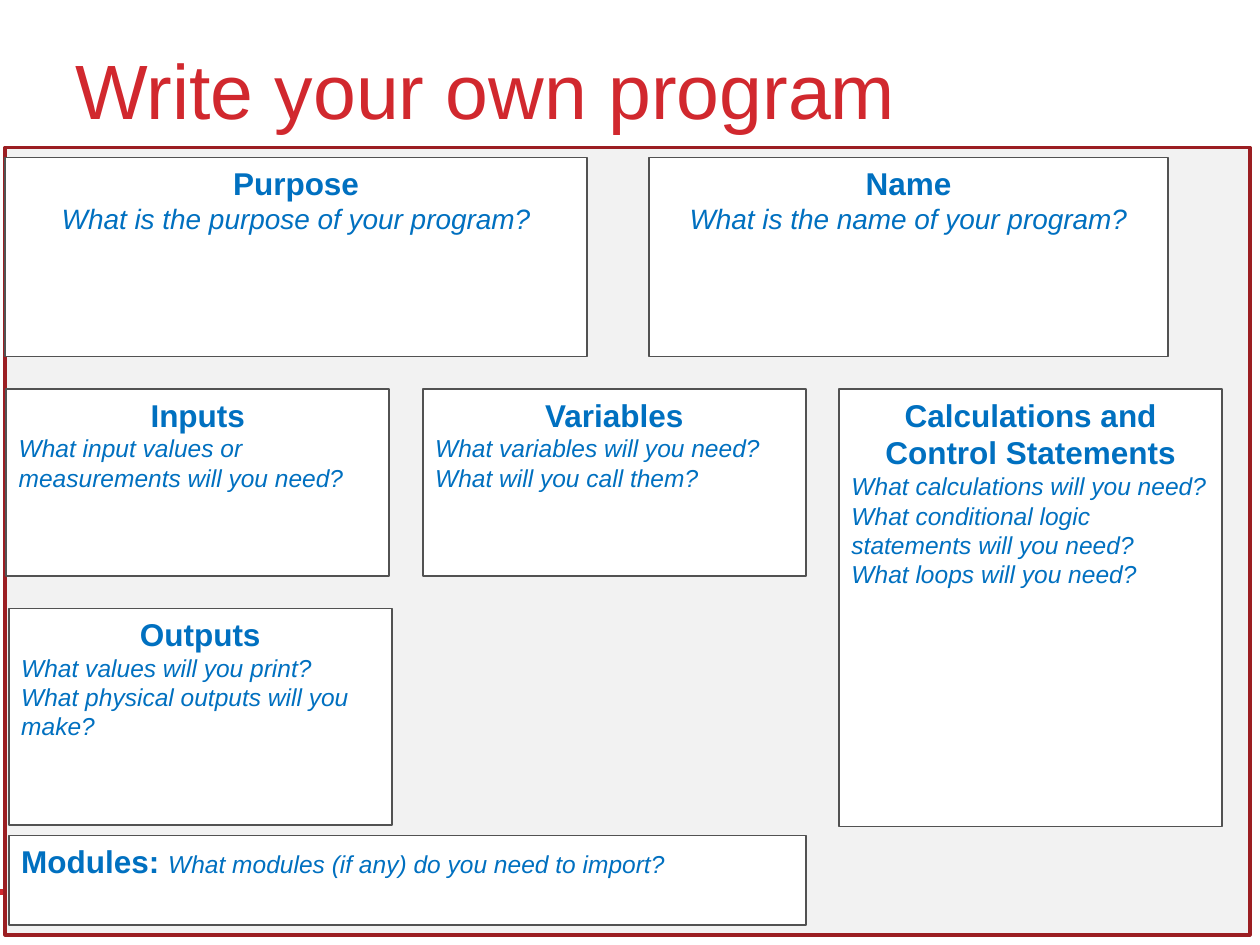
from lxml import etree
from pptx import Presentation
from pptx.dml.color import RGBColor
from pptx.enum import shapes, text
from pptx.oxml.ns import qn
from pptx.util import Inches, Pt

RED, DARK, BLUE = "D1282E", "9B1E22", "0070C0"
GREY, PALE, WHITE = "525252", "F2F2F2", "FFFFFF"
LEFT, MID = text.PP_ALIGN.LEFT, text.PP_ALIGN.CENTER


def color(code):
    return RGBColor.from_string(code)


def write(para, words, size=14, fill=BLUE, bold=False, italic=False, align=LEFT):
    para.alignment = align
    run = para.add_run()
    run.text = words
    font = run.font
    font.name, font.size = "Arial", Pt(size)
    font.bold, font.italic = bold, italic
    font.color.rgb = color(fill)


def panel(slide, box, fill=WHITE, line=GREY, width=1):
    shape = slide.shapes.add_shape(
        shapes.MSO_SHAPE.RECTANGLE, *map(Inches, box))
    shape.shadow.inherit = False
    shape.fill.solid()
    shape.fill.fore_color.rgb = color(fill)
    shape.line.color.rgb = color(line)
    shape.line.width = Pt(width)
    frame = shape.text_frame
    frame.word_wrap = True
    frame.vertical_anchor = text.MSO_ANCHOR.TOP
    return frame


def card(slide, box, head, hints, size=14, align=LEFT):
    frame = panel(slide, box)
    write(frame.paragraphs[0], head, size=18, bold=True, align=MID)
    for hint in hints:
        write(frame.add_paragraph(), hint, size=size, italic=True, align=align)


def strip(slide, box, head, hint):
    para = panel(slide, box).paragraphs[0]
    write(para, head, size=18, bold=True)
    write(para, hint, italic=True)


def rule(slide, x1, x2, y):
    line = slide.shapes.add_connector(
        shapes.MSO_CONNECTOR.STRAIGHT, *map(Inches, (x1, y, x2, y)))
    line.line.color.rgb = color(RED)
    line.line.width = Pt(3)
    etree.SubElement(line._element.spPr, qn("a:effectLst"))


def title(slide, box, words):
    frame = slide.shapes.add_textbox(*map(Inches, box)).text_frame
    frame.word_wrap = True
    frame.vertical_anchor = text.MSO_ANCHOR.MIDDLE
    write(frame.paragraphs[0], words, size=44, fill=RED)


def board(slide, box):
    x, y, w, h = box
    panel(slide, box, PALE, DARK, 2)

    # Top row: what the program is
    top = y + 0.08
    for left, wide, head, hint in (
            (x, 4.62, "Purpose", "What is the purpose of your program?"),
            (x + 5.11, 4.12, "Name", "What is the name of your program?")):
        card(slide, (left, top, wide, 1.58), head, [hint], size=16, align=MID)

    # Three columns: what the program needs
    col, gap, row = 3.04, 0.265, y + 1.92
    columns = (
        ("Inputs", 1.48, ["What input values or measurements will you need?"]),
        ("Variables", 1.48, ["What variables will you need?",
                             "What will you call them?"]),
        ("Calculations and Control Statements", 3.47,
         ["What calculations will you need?",
          "What conditional logic statements will you need?",
          "What loops will you need?"]))
    for i, (head, tall, hints) in enumerate(columns):
        card(slide, (x + 0.01 + i * (col + gap), row, col, tall), head, hints)

    # Lower left: results and imports
    card(slide, (x + 0.03, y + 3.66, col, 1.72), "Outputs",
         ["What values will you print?", "What physical outputs will you make?"])
    strip(slide, (x + 0.03, y + 5.46, 2 * col + gap - 0.02, 0.71),
          "Modules: ", "What modules (if any) do you need to import?")


def main():
    deck = Presentation()
    deck.slide_width, deck.slide_height = Inches(10), Inches(7.5)
    slide = deck.slides.add_slide(deck.slide_layouts[6])
    rule(slide, 0, 7.92, 7.08)
    board(slide, (0.04, 1.17, 9.88, 6.25))
    title(slide, (0.5, 0.08, 9, 1.25), "Write your own program")
    deck.save("out.pptx")


if __name__ == "__main__":
    main()
